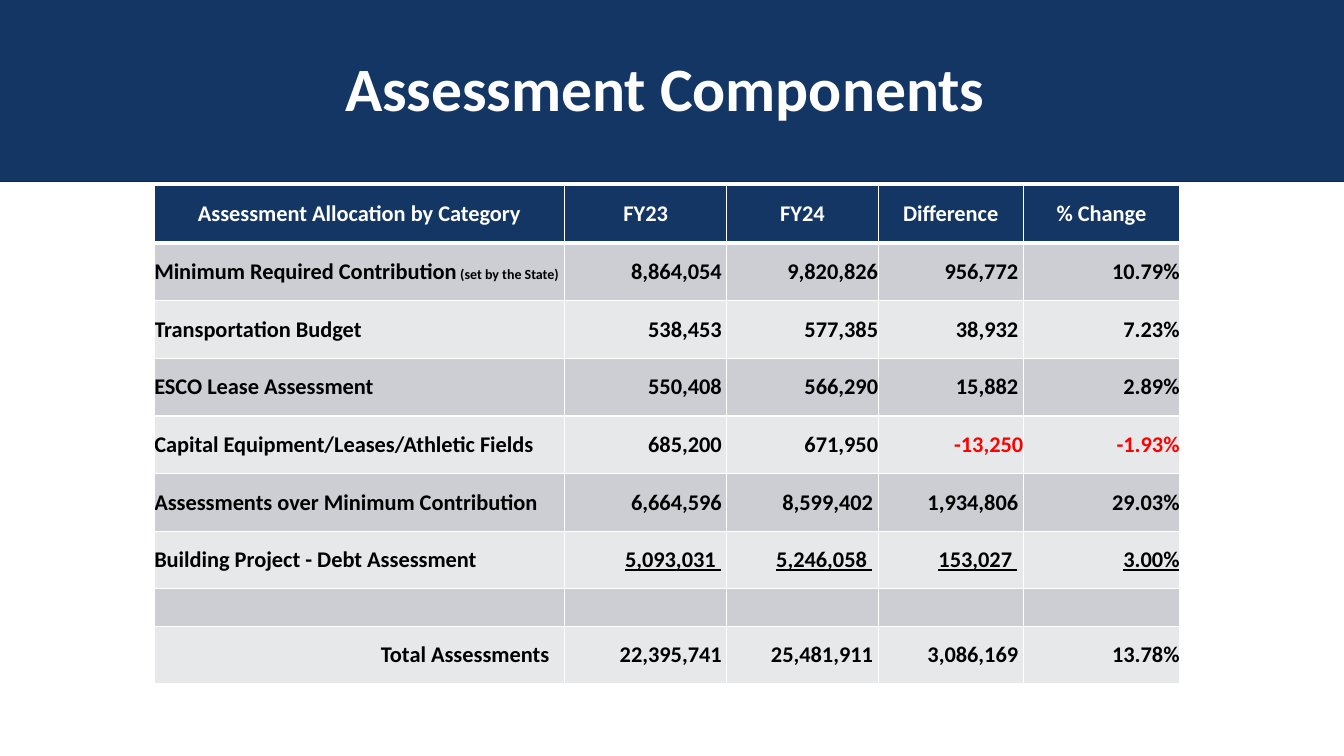
from dataclasses import dataclass
from typing import Optional

import lxml.etree
import pptx
import pptx.dml.color
import pptx.enum.shapes
import pptx.enum.text
import pptx.oxml.ns
import pptx.util

Inches = pptx.util.Inches
ALIGN = pptx.enum.text.PP_ALIGN
MIDDLE = pptx.enum.text.MSO_ANCHOR.MIDDLE
qn = pptx.oxml.ns.qn
NBSP = chr(160)  # keeps figures one space off the cell edge


@dataclass(frozen=True)
class Theme:
    font: str = "Calibri"
    navy: str = "143665"
    navy_edge: str = "0F284B"
    white: str = "FFFFFF"
    black: str = "000000"
    loss: str = "FF0000"
    bands: tuple[str, str] = ("CCCED3", "E7E8EA")
    title_size: float = 44
    body_size: float = 16
    note_size: float = 10
    grid_line: float = 1
    header_rule: float = 3


@dataclass(frozen=True)
class Assessment:
    category: str
    figures: tuple[str, ...]
    note: str = ""
    ruled: bool = False
    total: bool = False


THEME = Theme()
HEADINGS = ("Assessment Allocation by Category", "FY23", "FY24", "Difference", "% Change")
COLUMN_WIDTHS = (4.07, 1.61, 1.5, 1.44, 1.55)
ROW_HEIGHT, SPACER_HEIGHT = 0.572, 0.37
RULE_LENGTH, SPACE_WIDTH = 1.26, 0.05

ASSESSMENTS: tuple[Optional[Assessment], ...] = (
    Assessment("Minimum Required Contribution",
               ("8,864,054" + NBSP, "9,820,826", "956,772" + NBSP, "10.79%"),
               note=" (set by the State)"),
    Assessment("Transportation Budget",
               ("538,453" + NBSP, "577,385", "38,932" + NBSP, "7.23%")),
    Assessment("ESCO Lease Assessment",
               ("550,408" + NBSP, "566,290", "15,882" + NBSP, "2.89%")),
    Assessment("Capital Equipment/Leases/Athletic Fields",
               ("685,200" + NBSP, "671,950", "-13,250", "-1.93%")),
    Assessment("Assessments over Minimum Contribution",
               ("6,664,596" + NBSP, "8,599,402" + NBSP, "1,934,806" + NBSP, "29.03%")),
    Assessment("Building Project - Debt Assessment",
               ("5,093,031" + NBSP, "5,246,058" + NBSP, "153,027" + NBSP, "3.00%"),
               ruled=True),
    None,  # spacer row above the total
    Assessment("Total Assessments" + NBSP,
               ("22,395,741" + NBSP, "25,481,911" + NBSP, "3,086,169" + NBSP, "13.78%"),
               total=True),
)


def rgb(color: str) -> pptx.dml.color.RGBColor:
    return pptx.dml.color.RGBColor.from_string(color)


def add_text(paragraph, text: str, *, size: float = THEME.body_size,
             color: str = THEME.black, underline: bool = False, align=None) -> None:
    """Append one bold run to a paragraph."""
    if align is not None:
        paragraph.alignment = align
    run = paragraph.add_run()
    run.text = text
    font = run.font
    font.name, font.size, font.bold = THEME.font, pptx.util.Pt(size), True
    font.color.rgb = rgb(color)
    if underline:
        font.underline = True


def style_cell(cell, fill: str, *, top: float = THEME.grid_line,
               bottom: float = THEME.grid_line, inset: bool = False) -> None:
    """Set the borders, fill, anchor and margins of a cell."""
    properties = cell._tc.get_or_add_tcPr()
    widths = {"lnL": THEME.grid_line, "lnR": THEME.grid_line, "lnT": top, "lnB": bottom}
    for side, width in widths.items():
        line = lxml.etree.SubElement(properties, qn(f"a:{side}"), w=str(pptx.util.Pt(width)))
        solid = lxml.etree.SubElement(line, qn("a:solidFill"))
        lxml.etree.SubElement(solid, qn("a:srgbClr"), val=THEME.white)
    cell.fill.solid()
    cell.fill.fore_color.rgb = rgb(fill)
    cell.vertical_anchor = MIDDLE
    if not inset:
        cell.margin_left = cell.margin_right = cell.margin_top = cell.margin_bottom = 0


def add_ruled_figure(paragraph, figure: str, width: float) -> None:
    """Right-tab a figure so that its underline starts left of the digits."""
    stops = lxml.etree.SubElement(paragraph._p.get_or_add_pPr(), qn("a:tabLst"))
    for position, kind in ((width - RULE_LENGTH, "l"), (width - SPACE_WIDTH - 0.01, "r")):
        lxml.etree.SubElement(stops, qn("a:tab"), pos=str(Inches(position)), algn=kind)
    add_text(paragraph, "\t", align=ALIGN.LEFT)
    add_text(paragraph, "\t" + figure, underline=True)


def add_banner(slide) -> None:
    banner = slide.shapes.add_shape(
        pptx.enum.shapes.MSO_SHAPE.RECTANGLE,
        Inches(-0.14), Inches(-0.12), Inches(13.59), Inches(1.92))
    banner.shadow.inherit = False
    banner.fill.solid()
    banner.fill.fore_color.rgb = rgb(THEME.navy)
    banner.line.color.rgb = rgb(THEME.navy_edge)
    banner.line.width = pptx.util.Pt(1)


def add_title(slide, text: str) -> None:
    title = slide.shapes.add_textbox(Inches(0.85), Inches(0.18), Inches(11.5), Inches(1.45))
    title.text_frame.word_wrap = True
    title.text_frame.vertical_anchor = MIDDLE
    paragraph = title.text_frame.paragraphs[0]
    paragraph.line_spacing = 0.9
    add_text(paragraph, text, size=THEME.title_size, color=THEME.white, align=ALIGN.CENTER)


def fill_assessment(cells, assessment: Assessment) -> None:
    """Write one category and its figures."""
    label = cells[0].text_frame.paragraphs[0]
    add_text(label, assessment.category, align=ALIGN.RIGHT if assessment.total else ALIGN.LEFT)
    if assessment.note:
        add_text(label, assessment.note, size=THEME.note_size)
    for cell, figure, width in zip(cells[1:], assessment.figures, COLUMN_WIDTHS[1:]):
        paragraph = cell.text_frame.paragraphs[0]
        if assessment.ruled and figure.endswith(NBSP):
            add_ruled_figure(paragraph, figure, width)
        else:
            add_text(paragraph, figure, underline=assessment.ruled, align=ALIGN.RIGHT,
                     color=THEME.loss if figure.startswith("-") else THEME.black)


def add_assessment_table(slide) -> None:
    heights = [ROW_HEIGHT] + [ROW_HEIGHT if row else SPACER_HEIGHT for row in ASSESSMENTS]
    table = slide.shapes.add_table(
        len(heights), len(HEADINGS), Inches(1.53), Inches(1.84),
        Inches(sum(COLUMN_WIDTHS)), Inches(sum(heights))).table
    for column, width in zip(table.columns, COLUMN_WIDTHS):
        column.width = Inches(width)
    for row, height in zip(table.rows, heights):
        row.height = Inches(height)

    # Header row
    for cell, heading in zip(table.rows[0].cells, HEADINGS):
        style_cell(cell, THEME.navy, bottom=THEME.header_rule, inset=True)
        add_text(cell.text_frame.paragraphs[0], heading, color=THEME.white, align=ALIGN.CENTER)

    # Banded body rows
    for index, assessment in enumerate(ASSESSMENTS):
        cells = list(table.rows[index + 1].cells)
        for column, cell in enumerate(cells):
            is_total_label = assessment is not None and assessment.total and column == 0
            style_cell(cell, THEME.bands[index % 2], inset=is_total_label,
                       top=THEME.grid_line if index else THEME.header_rule)
        if assessment:
            fill_assessment(cells, assessment)


def main() -> None:
    deck = pptx.Presentation()
    deck.slide_width, deck.slide_height = Inches(13.33), Inches(7.5)
    slide = deck.slides.add_slide(deck.slide_layouts[6])
    add_banner(slide)
    add_title(slide, "Assessment Components")
    add_assessment_table(slide)
    deck.save("out.pptx")


if __name__ == "__main__":
    main()
